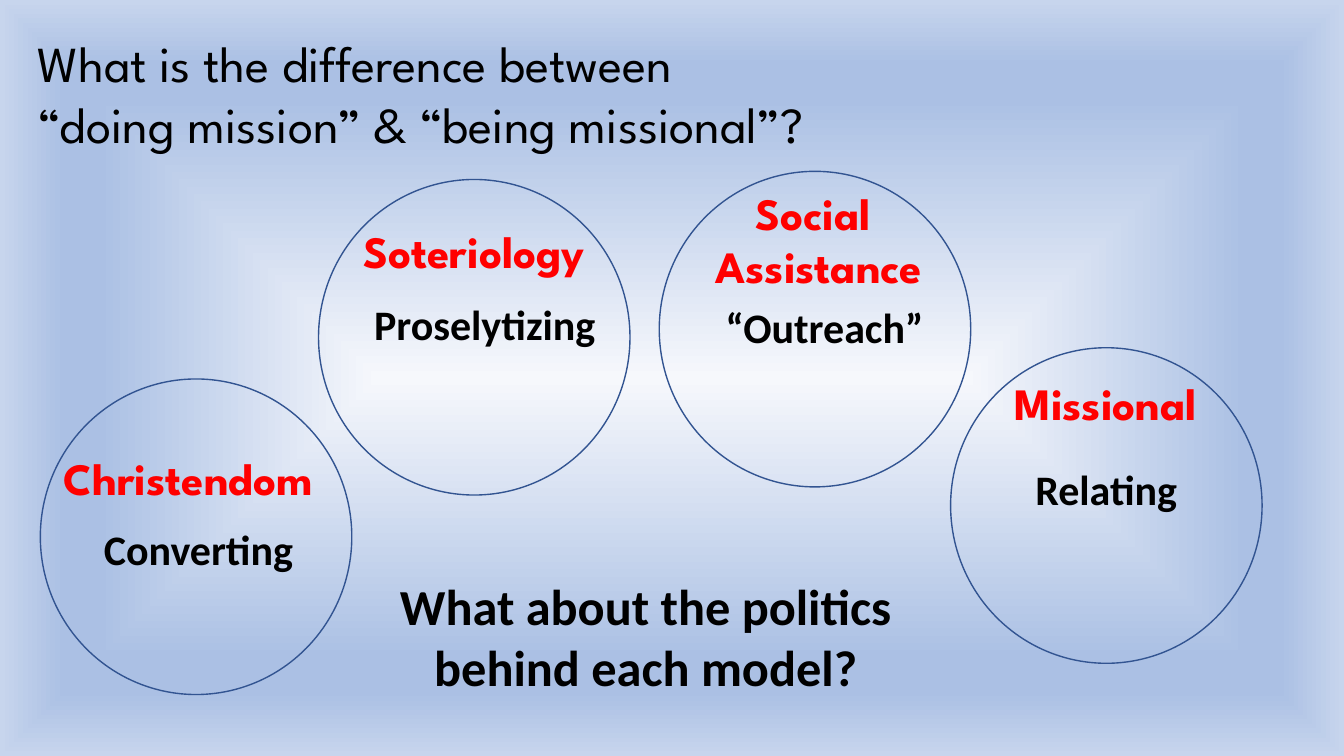
import pptx
import pptx.util
import pptx.dml.color
import pptx.enum.shapes
import pptx.enum.text
import pptx.oxml
import pptx.oxml.ns

Pt = pptx.util.Pt
RGBColor = pptx.dml.color.RGBColor
ALIGN = pptx.enum.text.PP_ALIGN
AUTO_SIZE = pptx.enum.text.MSO_AUTO_SIZE

BLACK = RGBColor(0x00, 0x00, 0x00)
RED = RGBColor(0xFF, 0x00, 0x00)
OUTLINE = RGBColor(0x32, 0x54, 0x91)
# Centre to edge: percent, colour
BACKDROP = [
    (0, RGBColor(0xF6, 0xF8, 0xFC)),
    (74, RGBColor(0xAB, 0xC0, 0xE4)),
    (83, RGBColor(0xAB, 0xC0, 0xE4)),
    (100, RGBColor(0xC7, 0xD5, 0xED)),
]
HEADING_FONT, BODY_FONT = "League Spartan", "Calibri"

# Content: boxes are left, top, width, height in points
QUESTION = "What is the difference between\n“doing mission” & “being missional”?"
QUESTION_BOX = (19.4, 19.4, 799.2, 94.3)
POLITICS = "What about the politics\nbehind each model?"
POLITICS_BOX = (278.6, 407.5, 378, 94.3)
CIRCLE_SIZE = (222.5, 225.4)
# Circle corner, model name and its box, activity and its box
MODELS = [
    ((28.8, 270.7), "Christendom", (25.9, 318.2, 217.4, 46.1),
     "Converting", (66.2, 370.1, 151.2, 43.9)),
    ((227.5, 128.2), "Soteriology", (241.2, 156.2, 195.1, 46.1),
     "Proselytizing", (254.2, 209.5, 184.3, 43.9)),
    ((470.9, 122.4), "Social \nAssistance", (491, 128.9, 187.9, 85),
     "“Outreach”", (510.5, 211.7, 157, 43.9)),
    ((679, 248.4), "Missional", (709.2, 265, 161.3, 46.1),
     "Relating", (731.5, 327.6, 117.4, 43.9)),
]


def format_text(frame, text, font, size, color, bold, aligns):
    frame.text = text
    for i, paragraph in enumerate(frame.paragraphs):
        paragraph.alignment = aligns[min(i, len(aligns) - 1)]
        paragraph.line_spacing = 1.0
        for run in paragraph.runs:
            run.font.name = font
            run.font.size = Pt(size)
            run.font.bold = bold
            run.font.color.rgb = color


def add_label(slide, box, text, font, size, color, aligns):
    frame = slide.shapes.add_textbox(*map(Pt, box)).text_frame
    frame.word_wrap = False
    frame.auto_size = AUTO_SIZE.SHAPE_TO_FIT_TEXT
    format_text(frame, text, font, size, color, True, aligns)


def paint_backdrop(slide):
    slide.background.fill.gradient()
    gradient = slide.element.find(".//" + pptx.oxml.ns.qn("a:gradFill"))
    for child in list(gradient):
        gradient.remove(child)
    stops = "".join(
        f'<a:gs pos="{percent * 1000}"><a:srgbClr val="{color}"/></a:gs>'
        for percent, color in BACKDROP)
    rect = pptx.oxml.parse_xml(
        f'<a:gradFill {pptx.oxml.ns.nsdecls("a")}><a:gsLst>{stops}</a:gsLst>'
        '<a:path path="rect"><a:fillToRect l="50000" t="50000" r="50000" b="50000"/>'
        '</a:path></a:gradFill>')
    for child in list(rect):
        gradient.append(child)


def main():
    deck = pptx.Presentation()
    deck.slide_width, deck.slide_height = Pt(960), Pt(540)
    slide = deck.slides.add_slide(deck.slide_layouts[5])
    paint_backdrop(slide)

    # Opening question
    question = slide.shapes.title
    question.left, question.top, question.width, question.height = map(Pt, QUESTION_BOX)
    question.text_frame.word_wrap = True
    question.text_frame.auto_size = AUTO_SIZE.SHAPE_TO_FIT_TEXT
    question.text_frame.vertical_anchor = pptx.enum.text.MSO_ANCHOR.TOP
    format_text(question.text_frame, QUESTION, HEADING_FONT, 36, BLACK, False, [ALIGN.LEFT])

    # Four models of mission
    for corner, model, model_box, activity, activity_box in MODELS:
        circle = slide.shapes.add_shape(
            pptx.enum.shapes.MSO_SHAPE.FLOWCHART_CONNECTOR, *map(Pt, corner + CIRCLE_SIZE))
        circle.shadow.inherit = False
        circle.fill.background()
        circle.line.color.rgb = OUTLINE
        circle.line.width = Pt(1)
        add_label(slide, model_box, model, HEADING_FONT, 32, RED, [ALIGN.CENTER])
        add_label(slide, activity_box, activity, BODY_FONT, 30, BLACK, [ALIGN.CENTER])

    # Closing question
    add_label(slide, POLITICS_BOX, POLITICS, BODY_FONT, 36, BLACK, [ALIGN.LEFT, ALIGN.CENTER])
    deck.save("out.pptx")


if __name__ == "__main__":
    main()
